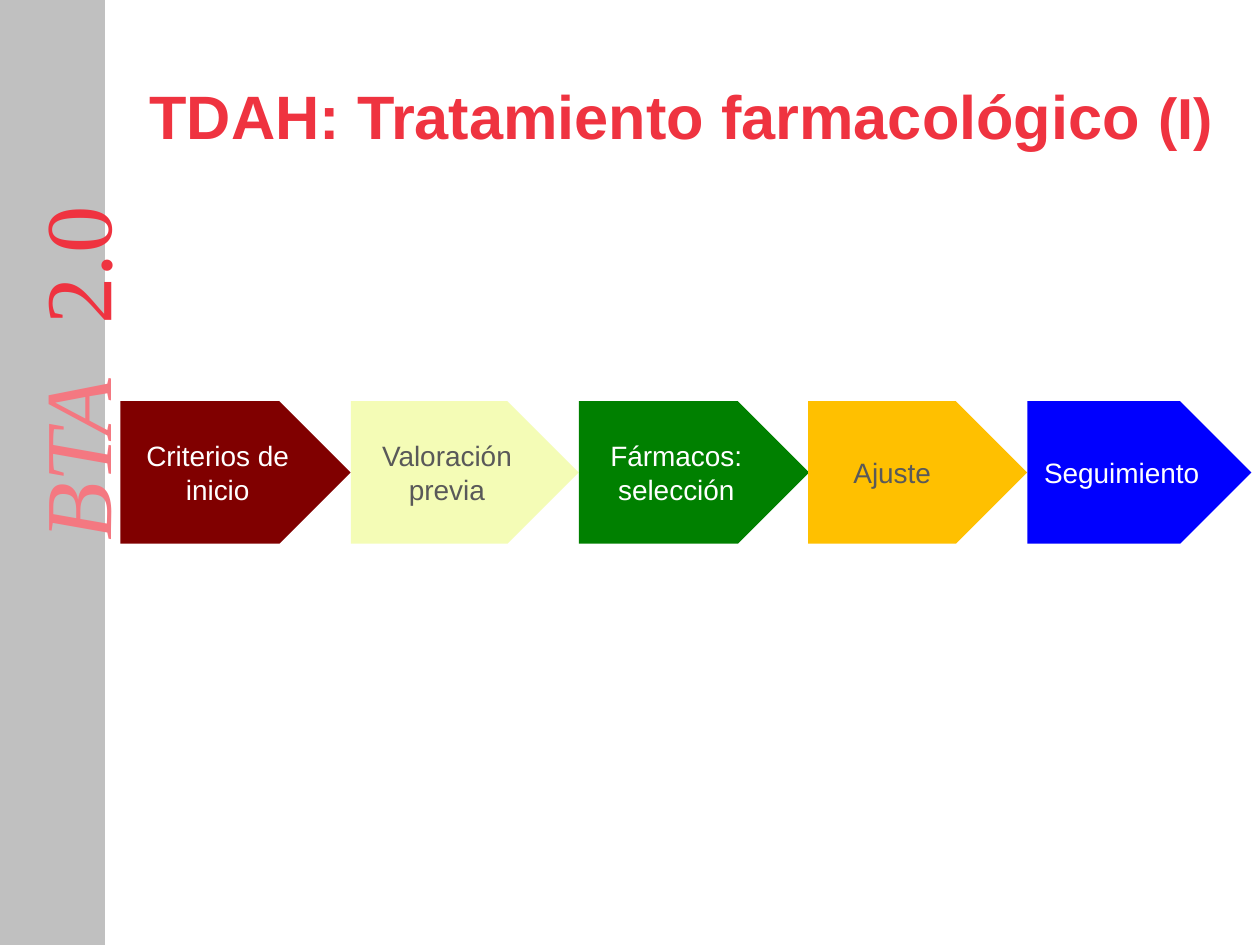
from pptx import Presentation
from pptx.dml.color import RGBColor
from pptx.enum.shapes import MSO_SHAPE
from pptx.enum.text import MSO_ANCHOR, PP_ALIGN
from pptx.oxml.ns import qn
from pptx.util import Inches, Pt
from lxml import etree

RECTANGLE = MSO_SHAPE.RECTANGLE
ARROW = MSO_SHAPE.PENTAGON
TOP, MIDDLE = MSO_ANCHOR.TOP, MSO_ANCHOR.MIDDLE
LEFT, CENTER = PP_ALIGN.LEFT, PP_ALIGN.CENTER

RED, PINK, GREY = "EF3340", "F47881", "C0C0C0"
WHITE, DARK = "FFFFFF", "595959"

# text, left, width, fill, text colour, right inset
STEPS = [
    ("Criterios de inicio", 0.97, 1.79, "800000", WHITE, 0.1),
    ("Valoración previa", 2.8, 1.77, "F4FCB6", DARK, 0.1),
    ("Fármacos: selección", 4.61, 1.79, "008000", WHITE, 0.1),
    ("Ajuste", 6.43, 1.7, "FFC000", DARK, 0.22),
    ("Seguimiento", 8.17, 1.74, "0000FF", WHITE, 0.1),
]


def rgb(value):
    return RGBColor.from_string(value)


class SlideBuilder:
    def __init__(self, page, font="Arial"):
        self.page = page
        self.font = font

    def shape(self, kind, left, top, width, height, color, line_width):
        shape = self.page.shapes.add_shape(
            kind, Inches(left), Inches(top), Inches(width), Inches(height))
        shape.shadow.inherit = False
        shape.fill.solid()
        shape.fill.fore_color.rgb = rgb(color)
        shape.line.color.rgb = rgb(color)
        shape.line.width = Pt(line_width)
        etree.SubElement(shape.line._get_or_add_ln(), qn("a:miter"), lim="800000")
        return shape

    def arrow(self, text, left, width, color, text_color, right_inset):
        arrow = self.shape(ARROW, left, 3.2, width, 1.1, color, 2.25)
        frame = arrow.text_frame
        frame.word_wrap = True
        frame.vertical_anchor = MIDDLE
        frame.margin_right = Inches(right_inset)
        para = frame.paragraphs[0]
        para.text = text
        para.alignment = CENTER
        para.font.name = self.font
        para.font.size = Pt(16)
        para.font.color.rgb = rgb(text_color)

    def text(self, spans, left, top, width, height, font, align=LEFT,
             top_inset=0.1, side_inset=0.1, bold=False, rotation=0, tab=None):
        """Add one line of text; spans are (text, size, colour, italic)."""
        box = self.page.shapes.add_textbox(
            Inches(left), Inches(top), Inches(width), Inches(height))
        box.rotation = rotation
        frame = box.text_frame
        frame.word_wrap = True
        frame.vertical_anchor = TOP
        frame.margin_top = Inches(top_inset)
        frame.margin_left = frame.margin_right = Inches(side_inset)
        para = frame.paragraphs[0]
        para.alignment = align
        if tab:
            tabs = etree.SubElement(para._p.get_or_add_pPr(), qn("a:tabLst"))
            etree.SubElement(tabs, qn("a:tab"), pos=str(Inches(tab)), algn="l")
        para.font.name = font
        para.font.bold = bold
        for content, size, color, italic in spans:
            span = para.add_run()
            span.text = content
            span.font.size = Pt(size)
            span.font.color.rgb = rgb(color)
            span.font.italic = italic


def main():
    deck = Presentation()
    deck.slide_width, deck.slide_height = Inches(10), Inches(7.5)
    builder = SlideBuilder(deck.slides.add_slide(deck.slide_layouts[6]))

    builder.shape(RECTANGLE, 0, 0, 0.83, 7.5, GREY, 0.75)
    builder.text([("BTA\t", 54, PINK, True), ("2.0", 54, RED, False)],
                 -1.11, 2.27, 3.23, 1, "Times New Roman",
                 top_inset=0.13, rotation=270, tab=1.71)
    builder.text([("TDAH: Tratamiento farmacológico ", 35, RED, False),
                  ("(I)", 33, RED, False)],
                 1.06, 0.52, 8.69, 0.85, builder.font, align=CENTER,
                 side_inset=0, bold=True)
    for step in STEPS:
        builder.arrow(*step)

    deck.save("out.pptx")


if __name__ == "__main__":
    main()
